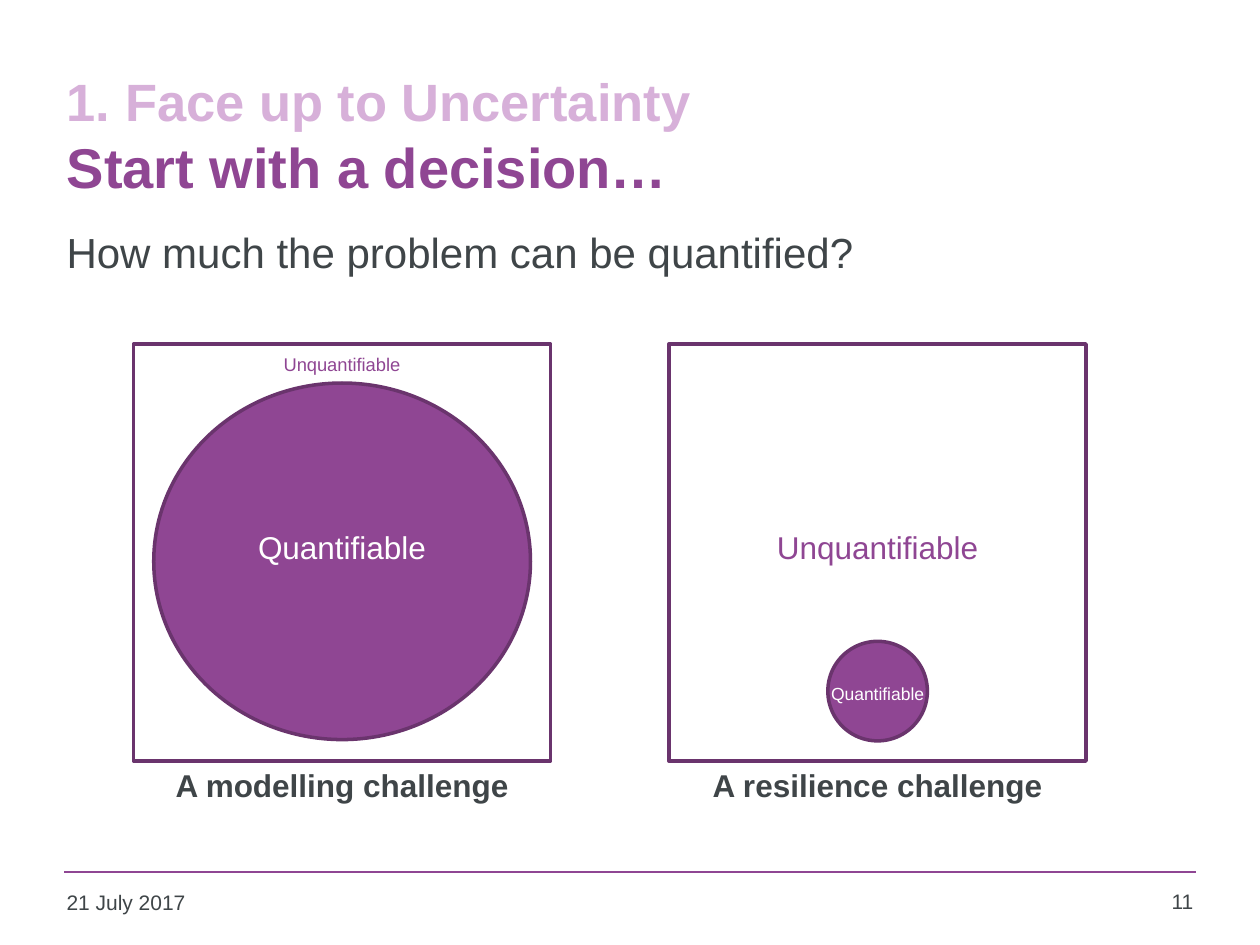
import pptx
import pptx.util
import pptx.dml.color
import pptx.enum.shapes
import pptx.enum.text
import pptx.oxml.ns
import lxml.etree

PURPLE, DARK, PALE = "8F4693", "6A346D", "D7B0D9"
GREY, WHITE = "3F4548", "FFFFFF"
SHAPE = pptx.enum.shapes.MSO_SHAPE
ALIGN = pptx.enum.text.PP_ALIGN
ANCHOR = pptx.enum.text.MSO_ANCHOR


def paint(code):
    return pptx.dml.color.RGBColor.from_string(code)


def child(node, tag, **attrs):
    return lxml.etree.SubElement(node, pptx.oxml.ns.qn(tag), **attrs)


class Deck:
    """Style and current slide; lengths are cells of a 100 by 75 grid."""

    font = "Arial"
    cols, rows = 100, 75

    def __init__(self, width, height):
        self.prs = pptx.Presentation()
        self.prs.slide_width = pptx.util.Inches(width)
        self.prs.slide_height = pptx.util.Inches(height)
        self.slide = self.prs.slides.add_slide(self.prs.slide_layouts[5])

    def x(self, col):
        return round(self.prs.slide_width * col / self.cols)

    def y(self, row):
        return round(self.prs.slide_height * row / self.rows)

    def box(self, col, row, wide, high):
        return self.x(col), self.y(row), self.x(wide), self.y(high)

    def run(self, para, text, size, color, bold=False):
        run = para.add_run()
        run.text = text
        run.font.name = self.font
        run.font.size = pptx.util.Pt(size)
        run.font.bold = bold
        run.font.color.rgb = paint(color)

    def title(self, area, lines):
        """Fill the title with (text, size, colour) lines."""
        head = self.slide.shapes.title
        head.left, head.top, head.width, head.height = self.box(*area)
        frame = head.text_frame
        frame.auto_size = pptx.enum.text.MSO_AUTO_SIZE.NONE
        frame.vertical_anchor = ANCHOR.MIDDLE
        para = frame.paragraphs[0]
        para.alignment = ALIGN.LEFT
        for i, (text, size, color) in enumerate(lines):
            if i:
                para.add_line_break()
                # The break needs a size too, or it makes the line taller.
                child(para._p[-1], "a:rPr", sz=str(lines[i - 1][1] * 100))
            self.run(para, text, size, color, True)

    def text(self, area, text, size, color=GREY, bold=False,
             align=ALIGN.CENTER, lead=50):
        """Add a text box; lead is the space before, in percent."""
        frame = self.slide.shapes.add_textbox(*self.box(*area)).text_frame
        frame.word_wrap = True
        para = frame.paragraphs[0]
        para.alignment = align
        if lead:
            gap = child(para._p.get_or_add_pPr(), "a:spcBef")
            child(gap, "a:spcPct", val=str(lead * 1000))
        self.run(para, text, size, color, bold)

    def shape(self, kind, area, fill=None):
        item = self.slide.shapes.add_shape(kind, *self.box(*area))
        item.shadow.inherit = False
        if fill:
            item.fill.solid()
            item.fill.fore_color.rgb = paint(fill)
        else:
            item.fill.background()
        item.line.color.rgb = paint(DARK)
        item.line.width = pptx.util.Pt(2)

    def rule(self, left, right, row):
        line = self.slide.shapes.add_connector(
            pptx.enum.shapes.MSO_CONNECTOR.STRAIGHT,
            self.x(left), self.y(row), self.x(right), self.y(row))
        line.line.color.rgb = paint(PURPLE)
        line.line.width = pptx.util.Pt(1)
        child(line._element.spPr, "a:effectLst")

    def panel(self, left, name, disc, labels):
        """Draw a square with a disc centred across it, labels and a name."""
        side = 33.1
        self.shape(SHAPE.RECTANGLE, (left, 27.3, side, side))
        top, wide, high = disc
        mid = left + (side - wide) / 2
        self.shape(SHAPE.OVAL, (mid, top, wide, high), PURPLE)
        for row, text, size, color in labels:
            self.text((left, row, side, 6.6), text, size, color)
        self.text((left, 60.3, side, 6.6), name, 18, bold=True)


def main():
    deck = Deck(10, 7.5)
    deck.rule(5.1, 94.9, 69.2)
    deck.title((4.3, 4.4, 90.7, 12.5),
               [("1. Face up to Uncertainty", 30, PALE),
                ("Start with a decision…", 32, PURPLE)])
    deck.text((4.3, 17.5, 90.7, 6.6),
              "How much the problem can be quantified?", 24, align=ALIGN.LEFT)
    deck.panel(10.6, "A modelling challenge", (30.4, 29.9, 28.3),
               [(41.4, "Quantifiable", 18, WHITE),
                (27.5, "Unquantifiable", 10.5, PURPLE)])
    deck.panel(53.1, "A resilience challenge", (50.9, 7.9, 7.9),
               [(41.4, "Unquantifiable", 18, PURPLE),
                (53.7, "Quantifiable", 10, WHITE)])
    deck.text((4.3, 70.1, 22, 3.6), "21 July 2017", 12,
              align=ALIGN.LEFT, lead=0)
    deck.text((88.6, 70, 7.1, 3.7), "11", 12, align=ALIGN.RIGHT, lead=0)
    deck.prs.save("out.pptx")


if __name__ == "__main__":
    main()
